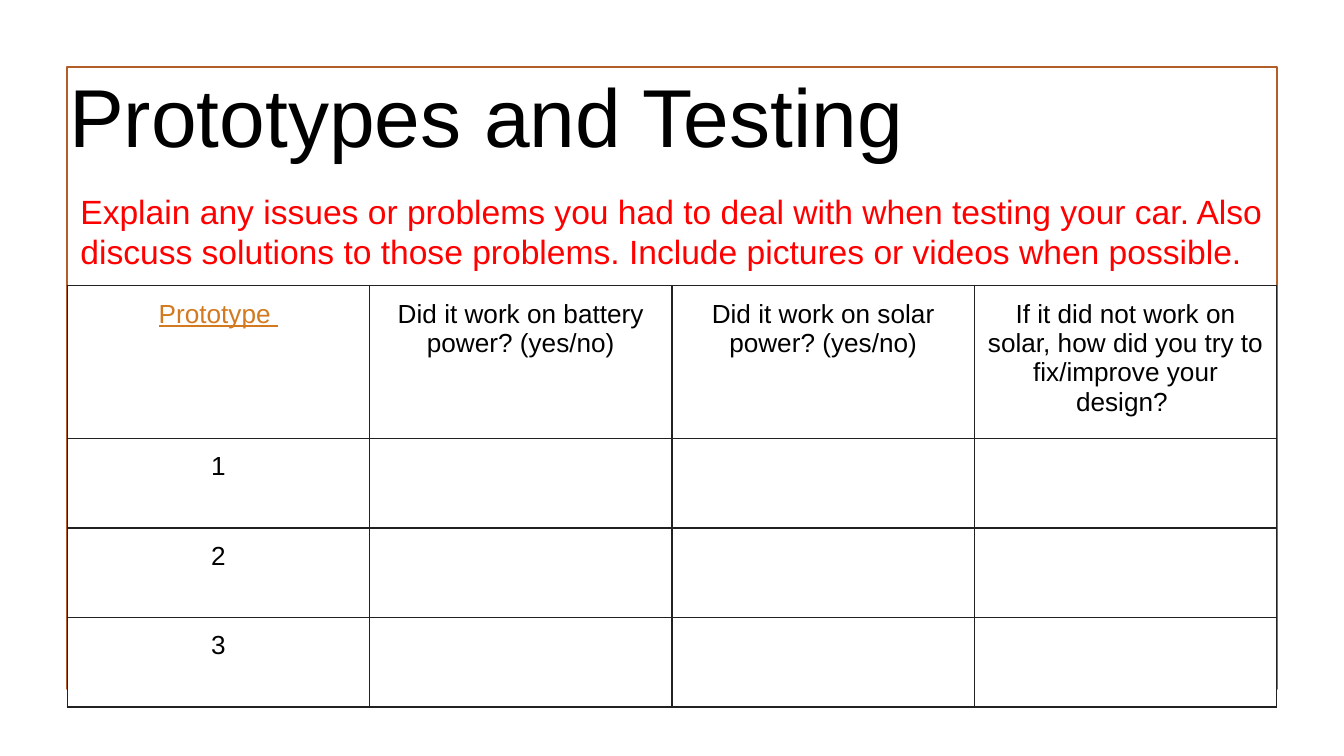
from dataclasses import dataclass

import lxml.etree
import pptx
import pptx.dml.color
import pptx.enum.shapes
import pptx.enum.text
import pptx.oxml.ns
import pptx.util

PX = 1905
PAGE_WIDTH, PAGE_HEIGHT = 4800, 2700
MARGIN = 240
INSET = 48
HEADER_HEIGHT = 485
ROW_HEIGHT = 320


@dataclass(frozen=True)
class Theme:
    font: str = "Arial"
    title_size: int = 44
    prompt_size: int = 18
    cell_size: int = 14
    ink: str = "000000"
    prompt: str = "FF0000"
    link: str = "D37A21"
    frame: str = "B15E28"
    grid: str = "212121"
    paper: str = "FFFFFF"
    frame_width: float = 1.25
    grid_width: float = 0.75


THEME = Theme()
HEADERS = [
    "Prototype ",
    "Did it work on battery power? (yes/no)",
    "Did it work on solar power? (yes/no)",
    "If it did not work on solar, how did you try to fix/improve your design? ",
]
PROTOTYPES = ["1", "2", "3"]


def emu(*lengths):
    return [pptx.util.Emu(length * PX) for length in lengths]


def rgb(value):
    return pptx.dml.color.RGBColor.from_string(value)


def write(para, text, size, color):
    para.text = text
    para.font.name = THEME.font
    para.font.size = pptx.util.Pt(size)
    para.font.color.rgb = rgb(color)
    lxml.etree.SubElement(para._p, pptx.oxml.ns.qn("a:endParaRPr"), sz=str(size * 100))


def set_insets(target):
    (inset,) = emu(INSET)
    target.margin_left = target.margin_right = inset
    target.margin_top = target.margin_bottom = inset


def add_frame(page, box):
    frame = page.shapes.add_shape(pptx.enum.shapes.MSO_SHAPE.RECTANGLE, *emu(*box))
    frame.shadow.inherit = False
    frame.fill.background()
    frame.line.color.rgb = rgb(THEME.frame)
    frame.line.width = pptx.util.Pt(THEME.frame_width)


def add_text(page, box, text, size, color, anchor):
    text_frame = page.shapes.add_textbox(*emu(*box)).text_frame
    text_frame.word_wrap = True
    text_frame.vertical_anchor = anchor
    set_insets(text_frame)
    write(text_frame.paragraphs[0], text, size, color)


def add_borders(cell):
    properties = cell._tc.get_or_add_tcPr()
    qn = pptx.oxml.ns.qn
    width = str(pptx.util.Pt(THEME.grid_width))
    for index, side in enumerate(("a:lnL", "a:lnR", "a:lnT", "a:lnB")):
        line = lxml.etree.Element(qn(side), w=width)
        fill = lxml.etree.SubElement(line, qn("a:solidFill"))
        lxml.etree.SubElement(fill, qn("a:srgbClr"), val=THEME.grid)
        properties.insert(index, line)


def fill_cell(cell, text):
    cell.fill.solid()
    cell.fill.fore_color.rgb = rgb(THEME.paper)
    set_insets(cell)
    add_borders(cell)
    para = cell.text_frame.paragraphs[0]
    para.alignment = pptx.enum.text.PP_ALIGN.CENTER
    write(para, text, THEME.cell_size, THEME.ink)


def add_results_table(page, box):
    left, top, width, height = box
    rows = [HEADERS] + [[name] + [""] * (len(HEADERS) - 1) for name in PROTOTYPES]
    table = page.shapes.add_table(len(rows), len(HEADERS), *emu(*box)).table
    for column in table.columns:
        (column.width,) = emu(width // len(HEADERS))
    for row_index, texts in enumerate(rows):
        (table.rows[row_index].height,) = emu(ROW_HEIGHT if row_index else HEADER_HEIGHT)
        for column_index, text in enumerate(texts):
            fill_cell(table.cell(row_index, column_index), text)
    link = table.cell(0, 0).text_frame.paragraphs[0]
    link.font.underline = True
    link.font.color.rgb = rgb(THEME.link)


def build_testing_page(page, box):
    left, top, width, height = box
    anchors = pptx.enum.text.MSO_ANCHOR
    inner_left, inner_width = left + MARGIN, width - 2 * MARGIN
    add_frame(page, (inner_left, top + MARGIN, inner_width, height - 2 * MARGIN))
    add_text(page, (left + 200, top + 101, 3840, 533), "Prototypes and Testing",
             THEME.title_size, THEME.ink, anchors.BOTTOM)
    add_text(page, (inner_left, top + 634, inner_width, 1944),
             "Explain any issues or problems you had to deal with when testing your car. "
             "Also discuss solutions to those problems. "
             "Include pictures or videos when possible.",
             THEME.prompt_size, THEME.prompt, anchors.TOP)
    table_height = HEADER_HEIGHT + ROW_HEIGHT * len(PROTOTYPES)
    add_results_table(page, (inner_left, top + 1021, inner_width, table_height))


def main():
    deck = pptx.Presentation()
    deck.slide_width, deck.slide_height = emu(PAGE_WIDTH, PAGE_HEIGHT)
    page = deck.slides.add_slide(deck.slide_layouts[6])
    build_testing_page(page, (0, 0, PAGE_WIDTH, PAGE_HEIGHT))
    deck.save("out.pptx")


if __name__ == "__main__":
    main()
